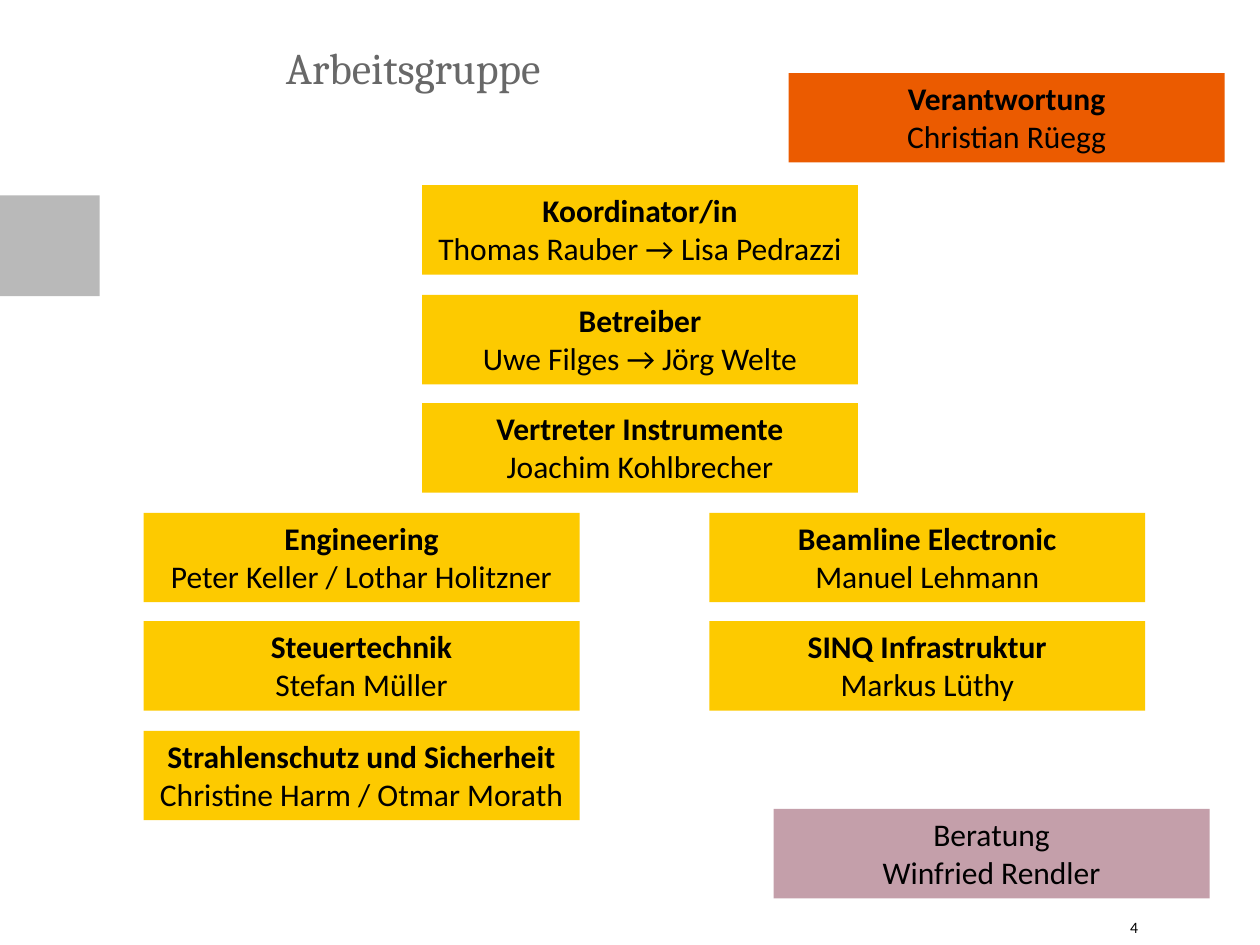
from dataclasses import dataclass

from pptx import Presentation
from pptx.dml.color import RGBColor as Rgb
from pptx.enum.shapes import MSO_SHAPE as Kind
from pptx.enum.text import MSO_ANCHOR as Anchor, MSO_AUTO_SIZE as Fit, PP_ALIGN as Align
from pptx.util import Inches, Pt


@dataclass(frozen=True)
class Theme:
    gold: str = "FDCA00"
    orange: str = "EB5B00"
    mauve: str = "C49FAA"
    gray: str = "B9B9B9"
    dim: str = "686868"
    black: str = "000000"
    head: str = "Cambria"
    body: str = "Calibri"
    title: int = 25
    text: int = 18
    small: int = 9


theme = Theme()
deck = Presentation()
deck.slide_width, deck.slide_height = Inches(10), Inches(7.5)
slide = deck.slides.add_slide(deck.slide_layouts[6])


def add_rect(left, top, width, height, color):
    rect = slide.shapes.add_shape(
        Kind.RECTANGLE, Inches(left), Inches(top), Inches(width), Inches(height))
    rect.shadow.inherit = False
    rect.fill.solid()
    rect.fill.fore_color.rgb = Rgb.from_string(color)
    rect.line.fill.background()
    return rect


def write(para, text, color, **style):
    run = para.add_run()
    run.text = text
    run.font.color.rgb = Rgb.from_string(color)
    for key, value in style.items():
        setattr(run.font, key, value)


add_rect(0, 1.55, 0.79, 0.8, theme.gray)

labels = [
    ("Arbeitsgruppe", 2.27, 0.32, 7.34, 0.56, theme.dim, theme.head, theme.title),
    ("4", 8.97, 7.28, 0.63, 0.22, theme.black, theme.body, theme.small),
]
for text, left, top, width, height, color, font, size in labels:
    box = slide.shapes.add_textbox(
        Inches(left), Inches(top), Inches(width), Inches(height))
    frame = box.text_frame
    layout = dict(word_wrap=True, vertical_anchor=Anchor.TOP, margin_left=0,
                  margin_top=0, margin_right=0, margin_bottom=0)
    for key, value in layout.items():
        setattr(frame, key, value)
    write(frame.paragraphs[0], text, color, name=font, size=Pt(size))

first, pitch = 1.47, 0.866
columns = [
    (3.35, 0, [
        ("Koordinator/in", "Thomas Rauber → Lisa Pedrazzi"),
        ("Betreiber", "Uwe Filges → Jörg Welte"),
        ("Vertreter Instrumente", "Joachim Kohlbrecher")]),
    (1.14, 3, [
        ("Engineering", "Peter Keller / Lothar Holitzner"),
        ("Steuertechnik", "Stefan Müller"),
        ("Strahlenschutz und Sicherheit", "Christine Harm / Otmar Morath")]),
    (5.63, 3, [
        ("Beamline Electronic", "Manuel Lehmann"),
        ("SINQ Infrastruktur", "Markus Lüthy")]),
]
cards = [
    (6.26, 0.58, theme.orange, True, "Verantwortung", "Christian Rüegg"),
    (6.14, 6.42, theme.mauve, False, "Beratung", "Winfried Rendler"),
]
for left, start, people in columns:
    for row, (role, name) in enumerate(people, start):
        cards.append((left, round(first + row * pitch, 2), theme.gold, True, role, name))

for left, top, color, bold, role, name in cards:
    frame = add_rect(left, top, 3.46, 0.71, color).text_frame
    layout = dict(word_wrap=True, auto_size=Fit.SHAPE_TO_FIT_TEXT,
                  vertical_anchor=Anchor.TOP)
    for key, value in layout.items():
        setattr(frame, key, value)
    for para, text, strong in (
            (frame.paragraphs[0], role, bold), (frame.add_paragraph(), name, False)):
        para.alignment = Align.CENTER
        write(para, text, theme.black, name=theme.body, size=Pt(theme.text), bold=strong)

deck.save("out.pptx")
